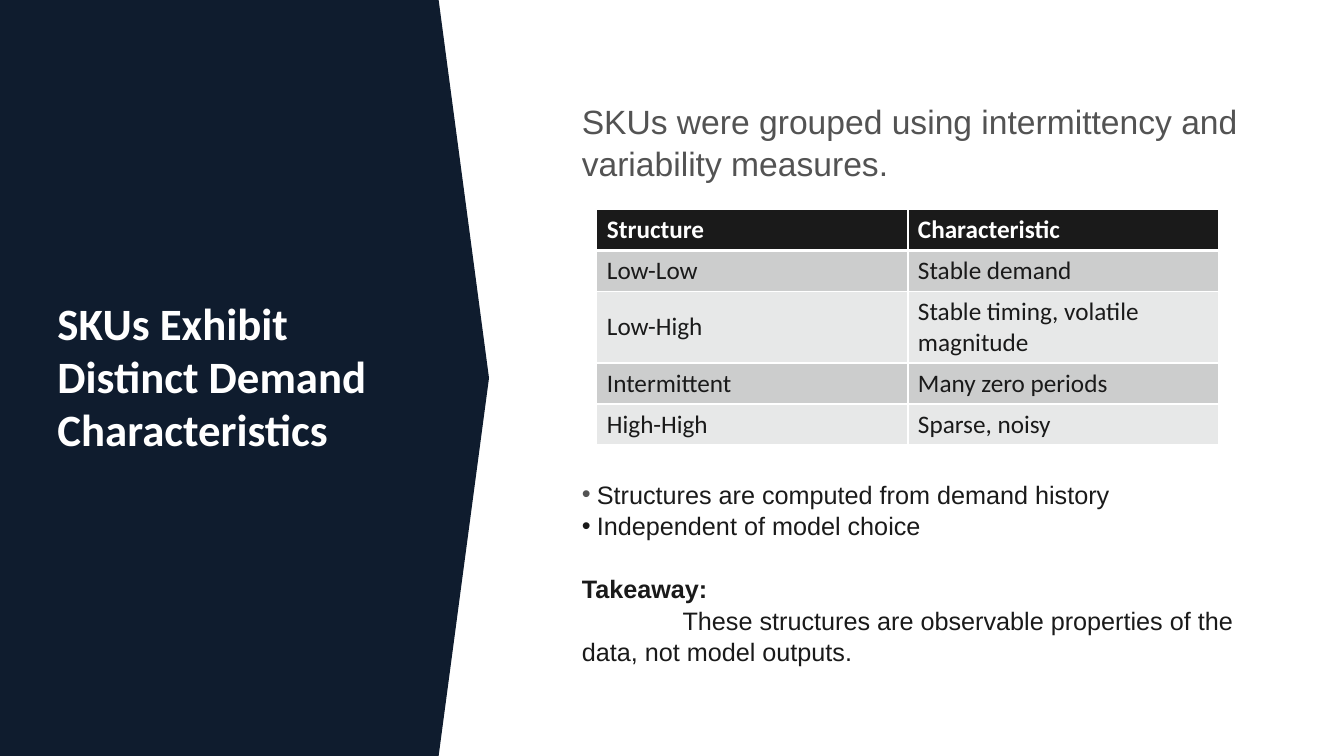
from lxml.etree import SubElement
from pptx import Presentation
from pptx.dml.color import RGBColor
from pptx.enum.shapes import MSO_SHAPE
from pptx.enum.text import MSO_ANCHOR, MSO_AUTO_SIZE, PP_ALIGN
from pptx.oxml.ns import qn
from pptx.util import Inches, Pt

# Content
TITLE = "SKUs Exhibit Distinct Demand Characteristics"
ROWS = [
    ("Structure", "Characteristic"),
    ("Low-Low", "Stable demand"),
    ("Low-High", "Stable timing, volatile magnitude"),
    ("Intermittent", "Many zero periods"),
    ("High-High", "Sparse, noisy"),
]
# Each line: style, text, space before in points
BODY = [
    ("lead", "SKUs were grouped using intermittency and variability measures.", 0),
    ("first", "Structures are computed from demand history", 210),
    ("point", "Independent of model choice", 0),
    ("head", "Takeaway:", 22),
    ("note", "These structures are observable properties of the data, not model outputs.", 0),
]


# Theme
class Theme:
    navy, white, ink, gray = "0F1C2E", "FFFFFF", "1A1A1A", "535353"
    bands = ("CCCDCD", "E7E8E8")
    sans, text = "Calibri", "Arial"
    title, lead, base = 32, 24, 18


# Text formats, and (left margin, first-line indent, bullet colour)
FONTS = {
    "title": dict(name=Theme.sans, size=Theme.title, color=Theme.white, bold=True),
    "top": dict(name=Theme.sans, size=Theme.base, color=Theme.white, bold=True),
    "cell": dict(name=Theme.sans, size=Theme.base, color=Theme.ink, bold=False),
    "lead": dict(name=Theme.text, size=Theme.lead, color=Theme.gray, bold=False),
    "point": dict(name=Theme.text, size=Theme.base, color=Theme.ink, bold=False),
    "head": dict(name=Theme.text, size=Theme.base, color=Theme.ink, bold=True),
}
FONTS["first"] = FONTS["note"] = FONTS["point"]
INDENT = {
    "first": (0.15, -0.15, Theme.gray),
    "point": (0.15, -0.15, Theme.ink),
    "note": (0, 1, None),
}

# Layout in inches
WIDE, HIGH = 13.33, 7.5
PANEL = (0, 0, 4.85, HIGH)
HEAD = (0.47, 2.81, 3.68, HIGH / 4)
MAIN = (5.67, 0.88, 6.98, 5.74)
GRID = (5.92, 2.08, 6.17, 1.82)
TOP, STEP = 0.3, 0.38


def rgb(code):
    return RGBColor.from_string(code)


def place(shape, box):
    for name, size in zip(("left", "top", "width", "height"), box):
        setattr(shape, name, Inches(size))


def style(font, look):
    for name, value in look.items():
        if name == "color":
            font.color.rgb = rgb(value)
        else:
            setattr(font, name, Pt(value) if name == "size" else value)


def write(par, text, kind):
    run = par.add_run()
    run.text = text
    style(run.font, FONTS[kind])


def setup(frame, anchor):
    look = dict(word_wrap=True, auto_size=MSO_AUTO_SIZE.NONE, vertical_anchor=anchor)
    for name, value in look.items():
        setattr(frame, name, value)
    for side in ("left", "top", "right", "bottom"):
        setattr(frame, "margin_" + side, Inches(0.1))


def indent(par, kind):
    left, first, dot = INDENT.get(kind, (0, 0, None))
    props = par._p.get_or_add_pPr()
    props.set("marL", str(Inches(left)))
    props.set("indent", str(Inches(first)))
    if dot:
        tint = SubElement(props, qn("a:buClr"))
        SubElement(tint, qn("a:srgbClr"), val=dot)
        SubElement(props, qn("a:buFont"), typeface=Theme.text)
        SubElement(props, qn("a:buChar"), char="•")
    else:
        SubElement(props, qn("a:buNone"))


def border(cell, base):
    props = cell._tc.get_or_add_tcPr()
    for spot, side in enumerate("LRTB"):
        width = Pt(base if side == "B" else 1)
        line = SubElement(props, qn("a:ln" + side), w=str(width))
        fill = SubElement(line, qn("a:solidFill"))
        SubElement(fill, qn("a:srgbClr"), val=Theme.white)
        props.insert(spot, line)


def add_panel(slide):
    panel = slide.shapes.add_shape(MSO_SHAPE.PENTAGON, *map(Inches, PANEL))
    panel.adjustments[0] = 0.103
    panel.shadow.inherit = False
    panel.fill.solid()
    panel.fill.fore_color.rgb = rgb(Theme.navy)
    panel.line.fill.background()
    slide.shapes._spTree.insert(2, panel._element)  # behind the title


def add_title(slide):
    title = slide.shapes.title
    place(title, HEAD)
    setup(title.text_frame, MSO_ANCHOR.MIDDLE)
    par = title.text_frame.paragraphs[0]
    par.alignment = PP_ALIGN.LEFT
    par.line_spacing = 0.98
    write(par, TITLE, "title")


def add_body(slide):
    body = slide.placeholders[1]
    place(body, MAIN)
    frame = body.text_frame
    setup(frame, MSO_ANCHOR.TOP)
    for spot, (kind, text, gap) in enumerate(BODY):
        par = frame.add_paragraph() if spot else frame.paragraphs[0]
        par.alignment = PP_ALIGN.LEFT
        par.line_spacing = 1.05
        par.space_before, par.space_after = Pt(gap), Pt(0)
        indent(par, kind)
        write(par, text, kind)


def add_grid(slide):
    table = slide.shapes.add_table(len(ROWS), 2, *map(Inches, GRID)).table
    for col in table.columns:
        col.width = Inches(GRID[2] / 2)
    for r, texts in enumerate(ROWS):
        table.rows[r].height = Inches(STEP if r else TOP)
        for c, text in enumerate(texts):
            cell = table.cell(r, c)
            cell.vertical_anchor = MSO_ANCHOR.MIDDLE
            border(cell, 1 if r else 3)
            cell.fill.solid()
            cell.fill.fore_color.rgb = rgb(Theme.bands[(r - 1) % 2] if r else Theme.ink)
            write(cell.text_frame.paragraphs[0], text, "cell" if r else "top")


def main():
    deck = Presentation()
    deck.slide_width, deck.slide_height = Inches(WIDE), Inches(HIGH)
    slide = deck.slides.add_slide(deck.slide_layouts[1])
    for build in (add_panel, add_title, add_body, add_grid):
        build(slide)
    deck.save("out.pptx")


if __name__ == "__main__":
    main()
